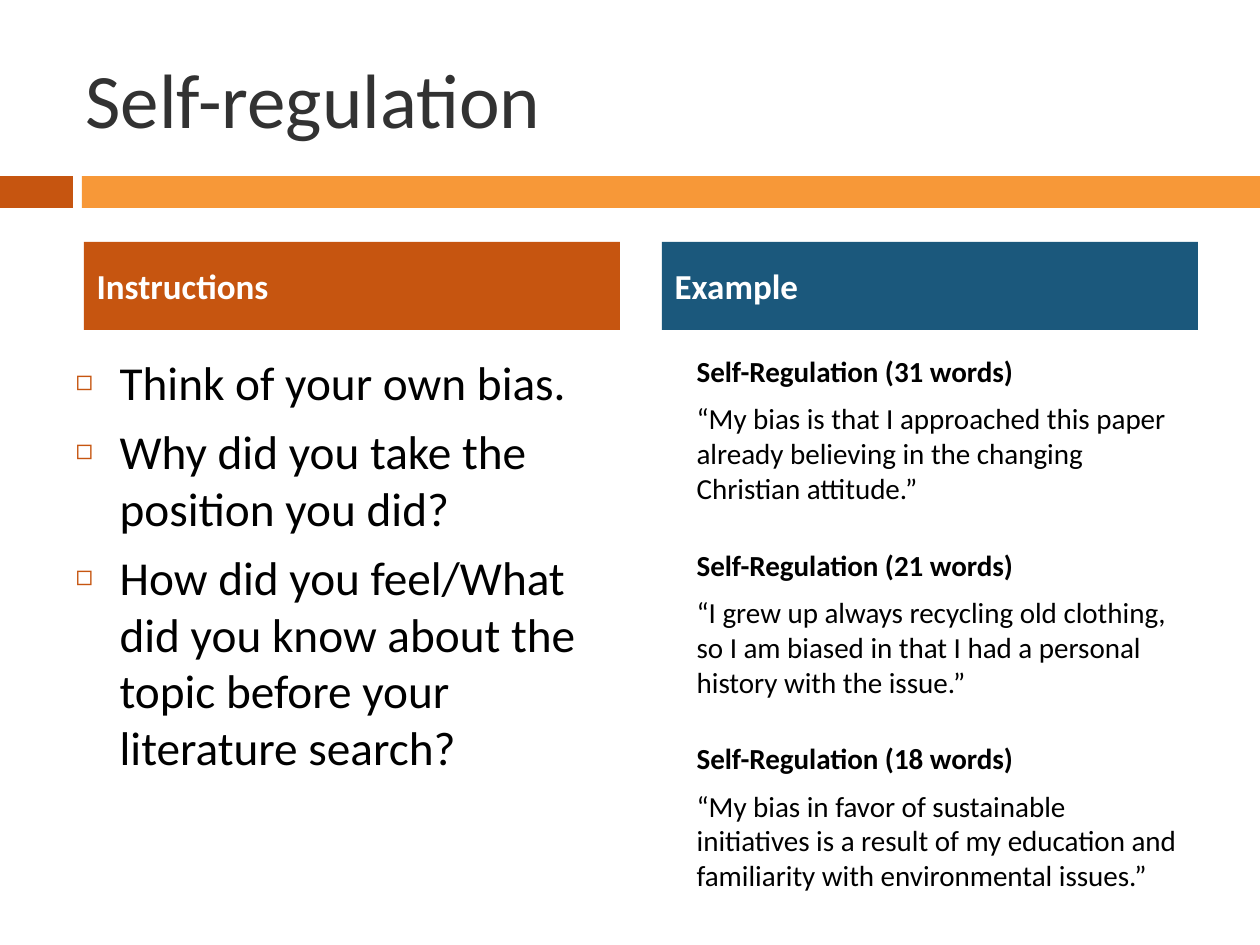
import pptx
import pptx.dml.color
import pptx.enum.shapes
import pptx.enum.text
import pptx.oxml.ns
import pptx.util
import lxml.etree

PX_PER_INCH = 126
ORANGE, AMBER, BLUE = "C65510", "F79838", "1B587C"
DARK, BLACK, WHITE = "323232", "000000", "FFFFFF"
LEFT, TOP = pptx.enum.text.PP_ALIGN.LEFT, pptx.enum.text.MSO_ANCHOR.TOP
MIDDLE = pptx.enum.text.MSO_ANCHOR.MIDDLE


def px(length):
    return pptx.util.Emu(round(length * 914400 / PX_PER_INCH))


def color(value):
    return pptx.dml.color.RGBColor.from_string(value)


class SlideBuilder:
    font_name = "Calibri"
    indent = 44

    def __init__(self, slide):
        self.slide = slide

    def place(self, target, box):
        for name, length in zip(("left", "top", "width", "height"), box):
            setattr(target, name, px(length))

    def fill(self, target, value):
        target.fill.solid()
        target.fill.fore_color.rgb = color(value)

    def bar(self, box, value):
        rectangle = self.slide.shapes.add_shape(
            pptx.enum.shapes.MSO_SHAPE.RECTANGLE, *map(px, box))
        rectangle.shadow.inherit = False
        rectangle.line.fill.background()
        self.fill(rectangle, value)

    def frame(self, index, box, anchor):
        placeholder = self.slide.placeholders[index]
        self.place(placeholder, box)
        settings = {"word_wrap": True, "vertical_anchor": anchor,
                    "auto_size": pptx.enum.text.MSO_AUTO_SIZE.NONE}
        for name, value in settings.items():
            setattr(placeholder.text_frame, name, value)
        return placeholder

    def paragraph(self, paragraph, text, size, value, bold=False, before=0):
        paragraph.alignment = LEFT
        paragraph.space_before = pptx.util.Pt(before)
        run = paragraph.add_run()
        run.text = text
        settings = {"name": self.font_name, "size": pptx.util.Pt(size), "bold": bold}
        for name, setting in settings.items():
            setattr(run.font, name, setting)
        run.font.color.rgb = color(value)

    def title(self, text, box):
        heading = self.frame(0, box, MIDDLE)
        self.paragraph(heading.text_frame.paragraphs[0], text, 44, DARK)

    def header(self, index, text, box, value):
        heading = self.frame(index, box, MIDDLE)
        self.fill(heading, value)
        self.paragraph(heading.text_frame.paragraphs[0], text, 20, WHITE, True, 5.8)

    def set_bullet(self, paragraph, marker):
        properties = paragraph._p.get_or_add_pPr()
        properties.set("marL", str(px(self.indent)))
        properties.set("indent", str(-px(self.indent) if marker else 0))

        def add(parent, tag, **attributes):
            return lxml.etree.SubElement(parent, pptx.oxml.ns.qn(tag), attributes)

        if marker:
            add(add(properties, "a:buClr"), "a:srgbClr", val=ORANGE)
            add(properties, "a:buSzPct", val="60000")
            add(properties, "a:buChar", char=marker)
        else:
            add(properties, "a:buNone")

    def body(self, index, box, entries, size, marker=None):
        text_frame = self.frame(index, box, TOP).text_frame
        for number, (text, bold, before) in enumerate(entries):
            paragraph = text_frame.add_paragraph() if number else text_frame.paragraphs[0]
            self.paragraph(paragraph, text, size, BLACK, bold, before)
            self.set_bullet(paragraph, marker)


def main():
    presentation = pptx.Presentation()
    presentation.slide_width = px(1260)
    presentation.slide_height = px(945)
    comparison_layout = presentation.slide_layouts[4]
    builder = SlideBuilder(presentation.slides.add_slide(comparison_layout))

    builder.bar((0, 176, 73, 32), ORANGE)
    builder.bar((82, 176, 1178, 32), AMBER)
    builder.title("Self-regulation", (73, 38, 1124, 120))
    builder.header(1, "Instructions", (84, 242, 536, 88), ORANGE)
    builder.header(3, "Example", (662, 242, 536, 88), BLUE)

    instructions = [
        "Think of your own bias.",
        "Why did you take the position you did?",
        "How did you feel/What did you know about the topic before your literature search?",
    ]
    builder.body(2, (63, 347, 557, 567),
                 [(text, False, 7) for text in instructions], 27, "◻")

    examples = [
        (31, "“My bias is that I approached this paper already believing in the "
             "changing Christian attitude.”"),
        (21, "“I grew up always recycling old clothing, so I am biased in that I had "
             "a personal history with the issue.”"),
        (18, "“My bias in favor of sustainable initiatives is a result of my education "
             "and familiarity with environmental issues.”"),
    ]
    example_entries = []
    for number, (words, quote) in enumerate(examples):
        example_entries.append(
            (f"Self-Regulation ({words} words)", True, 24 if number else 7))
        example_entries.append((quote, False, 7))
    builder.body(4, (640, 347, 557, 557), example_entries, 16.6)

    presentation.save("out.pptx")


if __name__ == "__main__":
    main()
